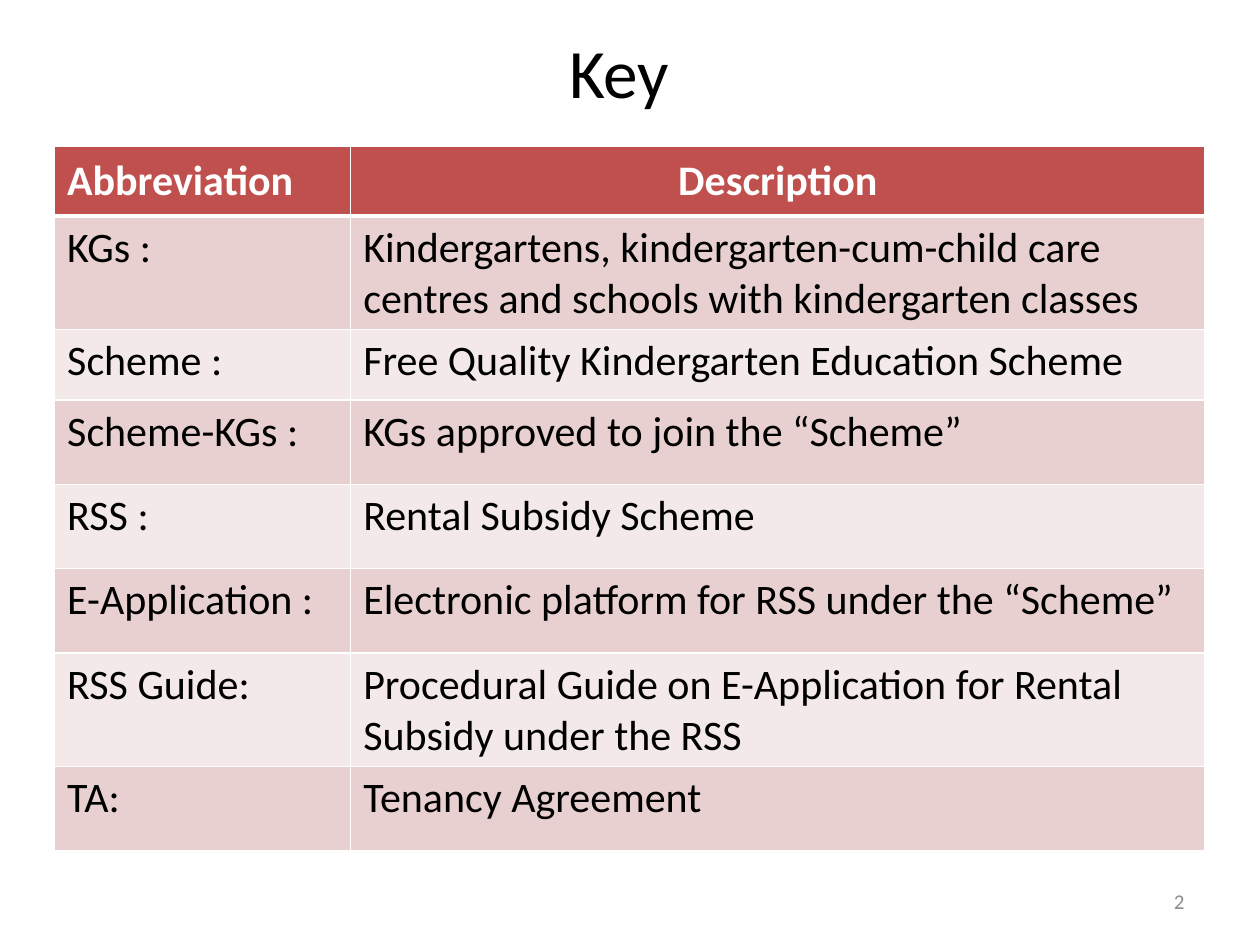
from typing import NamedTuple

import lxml.etree
import pptx
import pptx.dml.color
import pptx.enum.text
import pptx.oxml.ns
import pptx.util

Pt = pptx.util.Pt
Align = pptx.enum.text.PP_ALIGN
Anchor = pptx.enum.text.MSO_ANCHOR

COLORS = {
    "header": "C0504D",
    "odd": "E8D0D0",
    "even": "F4E9E9",
    "white": "FFFFFF",
    "black": "000000",
    "grey": "8C8C8C",
}
FONT = "Calibri"
COLUMN_WIDTHS = (169.2, 488.16)
HEADER_HEIGHT = 39.6


class Entry(NamedTuple):
    abbreviation: str
    description: str
    height: float = 48.24


class Box(NamedTuple):
    left: float
    top: float
    width: float
    height: float


ENTRIES = [
    Entry(
        "KGs :",
        "Kindergartens, kindergarten-cum-child care centres "
        "and schools with kindergarten classes",
    ),
    Entry("Scheme :", "Free Quality Kindergarten Education Scheme", 40.32),
    Entry("Scheme-KGs :", "KGs approved to join the “Scheme”"),
    Entry("RSS :", "Rental Subsidy Scheme"),
    Entry("E-Application :", "Electronic platform for RSS under the “Scheme”"),
    Entry(
        "RSS Guide:",
        "Procedural Guide on E-Application for Rental Subsidy under the RSS",
    ),
    Entry("TA:", "Tenancy Agreement"),
]


def rgb(color: str) -> pptx.dml.color.RGBColor:
    return pptx.dml.color.RGBColor.from_string(COLORS[color])


def write_text(frame, text: str, *, size: float = 24, color: str = "black",
               bold: bool = False, align=Align.LEFT) -> None:
    paragraph = frame.paragraphs[0]
    paragraph.alignment = align
    run = paragraph.add_run()
    run.text = text
    run.font.name = FONT
    run.font.size = Pt(size)
    run.font.bold = bold
    run.font.color.rgb = rgb(color)


def add_label(slide, box: Box, text: str, **text_format) -> None:
    label = slide.shapes.add_textbox(*map(Pt, box))
    label.text_frame.word_wrap = True
    label.text_frame.vertical_anchor = Anchor.MIDDLE
    write_text(label.text_frame, text, **text_format)


def set_borders(cell, bottom_width: float) -> None:
    properties = cell._tc.get_or_add_tcPr()
    qn = pptx.oxml.ns.qn
    for side in ("L", "R", "T", "B"):
        width = bottom_width if side == "B" else 1
        line = lxml.etree.SubElement(
            properties, qn(f"a:ln{side}"), w=str(int(Pt(width)))
        )
        fill = lxml.etree.SubElement(line, qn("a:solidFill"))
        lxml.etree.SubElement(fill, qn("a:srgbClr"), val=COLORS["white"])


def fill_cell(cell, text: str, fill: str, *, anchor=Anchor.TOP,
              bottom_width: float = 1, **text_format) -> None:
    set_borders(cell, bottom_width)
    cell.fill.solid()
    cell.fill.fore_color.rgb = rgb(fill)
    cell.vertical_anchor = anchor
    write_text(cell.text_frame, text, **text_format)


def add_key_table(slide) -> None:
    heights = [HEADER_HEIGHT] + [entry.height for entry in ENTRIES]
    box = Box(31.2, 83.8, sum(COLUMN_WIDTHS), sum(heights))
    key = slide.shapes.add_table(
        len(heights), len(COLUMN_WIDTHS), *map(Pt, box)
    ).table
    for column, width in zip(key.columns, COLUMN_WIDTHS):
        column.width = Pt(width)
    for row, height in zip(key.rows, heights):
        row.height = Pt(height)

    headings = (("Abbreviation", Align.LEFT), ("Description", Align.CENTER))
    for column, (heading, align) in enumerate(headings):
        fill_cell(key.cell(0, column), heading, "header", anchor=Anchor.MIDDLE,
                  bottom_width=3, color="white", bold=True, align=align)
    for row, entry in enumerate(ENTRIES, start=1):
        band = "odd" if row % 2 else "even"
        fill_cell(key.cell(row, 0), entry.abbreviation, band)
        fill_cell(key.cell(row, 1), entry.description, band)


def main() -> None:
    presentation = pptx.Presentation()
    presentation.slide_width = Pt(720)
    presentation.slide_height = Pt(540)
    slide = presentation.slides.add_slide(presentation.slide_layouts[6])
    add_label(slide, Box(70.56, 15.12, 566.64, 51.12), "Key",
              size=39.6, align=Align.CENTER)
    add_label(slide, Box(516, 500.5, 168, 28.75), "2",
              size=12, color="grey", align=Align.RIGHT)
    add_key_table(slide)
    presentation.save("out.pptx")


if __name__ == "__main__":
    main()
